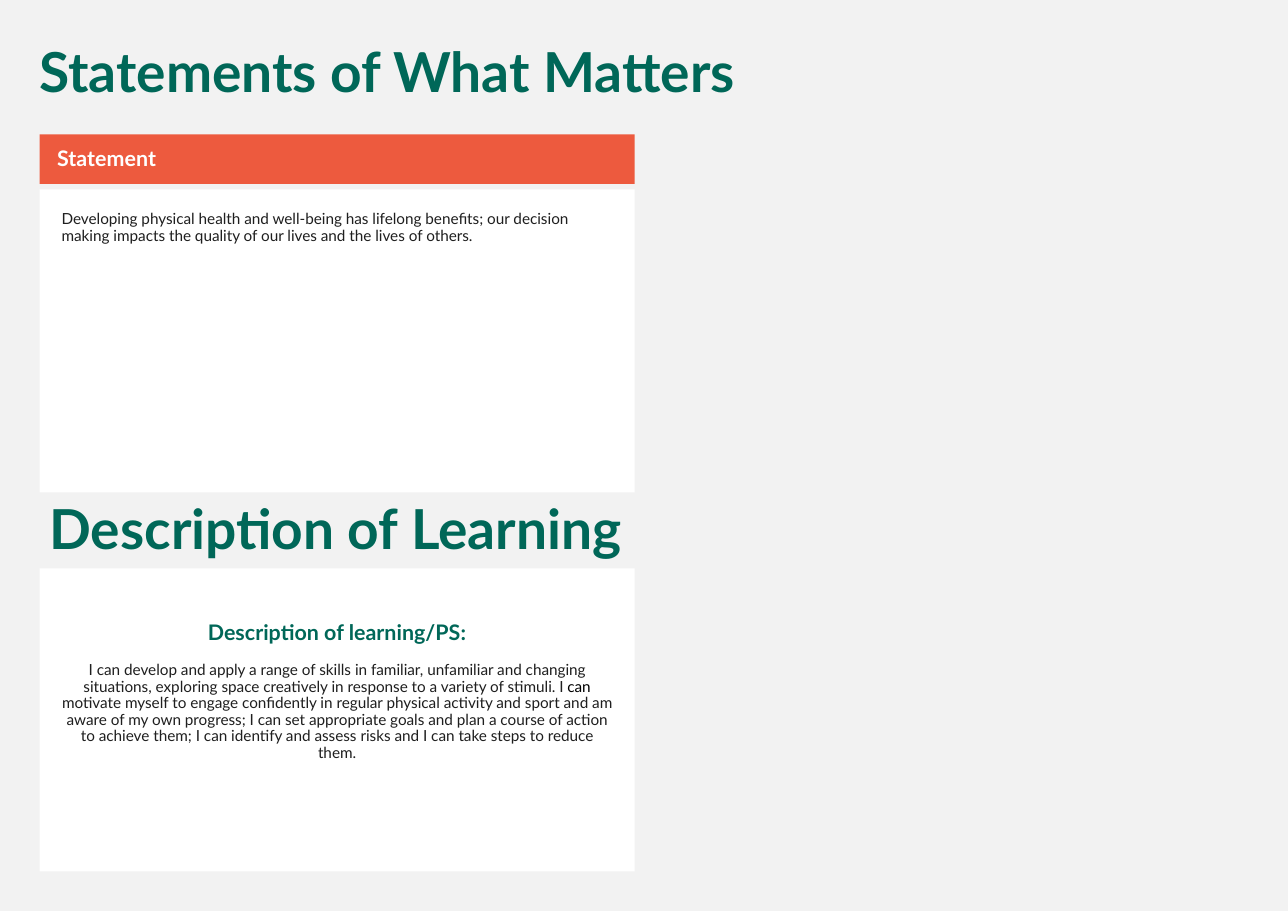
import pptx
import pptx.dml.color
import pptx.enum.shapes
import pptx.enum.text
import pptx.util

Inches = pptx.util.Inches
Pt = pptx.util.Pt
RGBColor = pptx.dml.color.RGBColor
Align = pptx.enum.text.PP_ALIGN
Anchor = pptx.enum.text.MSO_ANCHOR

GREY = RGBColor(0xF2, 0xF2, 0xF2)
WHITE = RGBColor(0xFF, 0xFF, 0xFF)
BLACK = RGBColor(0x00, 0x00, 0x00)
INK = RGBColor(0x1F, 0x1F, 0x1F)
GREEN = RGBColor(0x00, 0x67, 0x58)
ORANGE = RGBColor(0xED, 0x5A, 0x3E)

PANEL_LEFT = 0.36
PANEL_WIDTH = 5.4
PANEL_HEIGHT = 2.75


class LearningSlide:
    font_name = "Lato"

    def __init__(self, presentation):
        self.slide = presentation.slides.add_slide(presentation.slide_layouts[6])
        self.slide.background.fill.solid()
        self.slide.background.fill.fore_color.rgb = GREY

    def panel(self, top, height, color, margins, anchor=Anchor.TOP):
        """Add a filled panel and return its text frame; margins run left, top, right, bottom."""
        shape = self.slide.shapes.add_shape(
            pptx.enum.shapes.MSO_SHAPE.RECTANGLE,
            Inches(PANEL_LEFT), Inches(top), Inches(PANEL_WIDTH), Inches(height))
        shape.shadow.inherit = False
        shape.fill.solid()
        shape.fill.fore_color.rgb = color
        shape.line.fill.background()
        frame = shape.text_frame
        frame.word_wrap = True
        frame.vertical_anchor = anchor
        (frame.margin_left, frame.margin_top,
         frame.margin_right, frame.margin_bottom) = map(Inches, margins)
        return frame

    def heading(self, left, top, text):
        box = self.slide.shapes.add_textbox(
            Inches(left), Inches(top), Inches(11.08), Inches(0.65))
        box.text_frame.word_wrap = True
        self.fill_paragraph(box.text_frame.paragraphs[0], [(text, GREEN)], 36, bold=True)

    def fill_paragraph(self, paragraph, parts, size, bold=False, alignment=Align.LEFT):
        """Fill a paragraph with (text, color) parts."""
        paragraph.alignment = alignment
        paragraph.line_spacing = 0.9
        paragraph.space_before = Pt(11)
        for text, color in parts:
            run = paragraph.add_run()
            run.text = text
            run.font.name = self.font_name
            run.font.size = Pt(size)
            run.font.bold = bold
            run.font.color.rgb = color


def main():
    presentation = pptx.Presentation()
    presentation.slide_width = Inches(11.69)
    presentation.slide_height = Inches(8.27)
    page = LearningSlide(presentation)

    statement = page.panel(1.72, PANEL_HEIGHT, WHITE, (0.2, 0.2, 0.2, 0.2))
    page.fill_paragraph(statement.paragraphs[0], [
        ("Developing physical health and well-being has lifelong benefits; our decision "
         "making impacts the quality of our lives and the lives of others.", INK)], 10)

    label = page.panel(1.22, 0.45, ORANGE, (0.16, 0.05, 0.1, 0.05), Anchor.MIDDLE)
    page.fill_paragraph(label.paragraphs[0], [("Statement", WHITE)], 14, bold=True)

    description = page.panel(5.16, PANEL_HEIGHT, WHITE, (0.2, 0.49, 0.2, 0.2))
    page.fill_paragraph(description.paragraphs[0], [("Description of learning/PS:", GREEN)],
                        14, bold=True, alignment=Align.CENTER)
    page.fill_paragraph(description.add_paragraph(), [
        ("I can develop and apply a range of skills in familiar, unfamiliar and changing "
         "situations, exploring space creatively in response to a variety of stimuli. I", INK),
        (" can ", BLACK),
        ("motivate myself to engage confidently in regular physical activity and sport and "
         "am aware of my own progress; I can set appropriate goals and plan a course of "
         "action to achieve them; I can identify and assess risks and I can take steps to "
         "reduce them.", INK)], 10, alignment=Align.CENTER)

    page.heading(0.26, 0.36, "Statements of What Matters")
    page.heading(0.35, 4.51, "Description of Learning")

    presentation.save("out.pptx")


if __name__ == "__main__":
    main()
